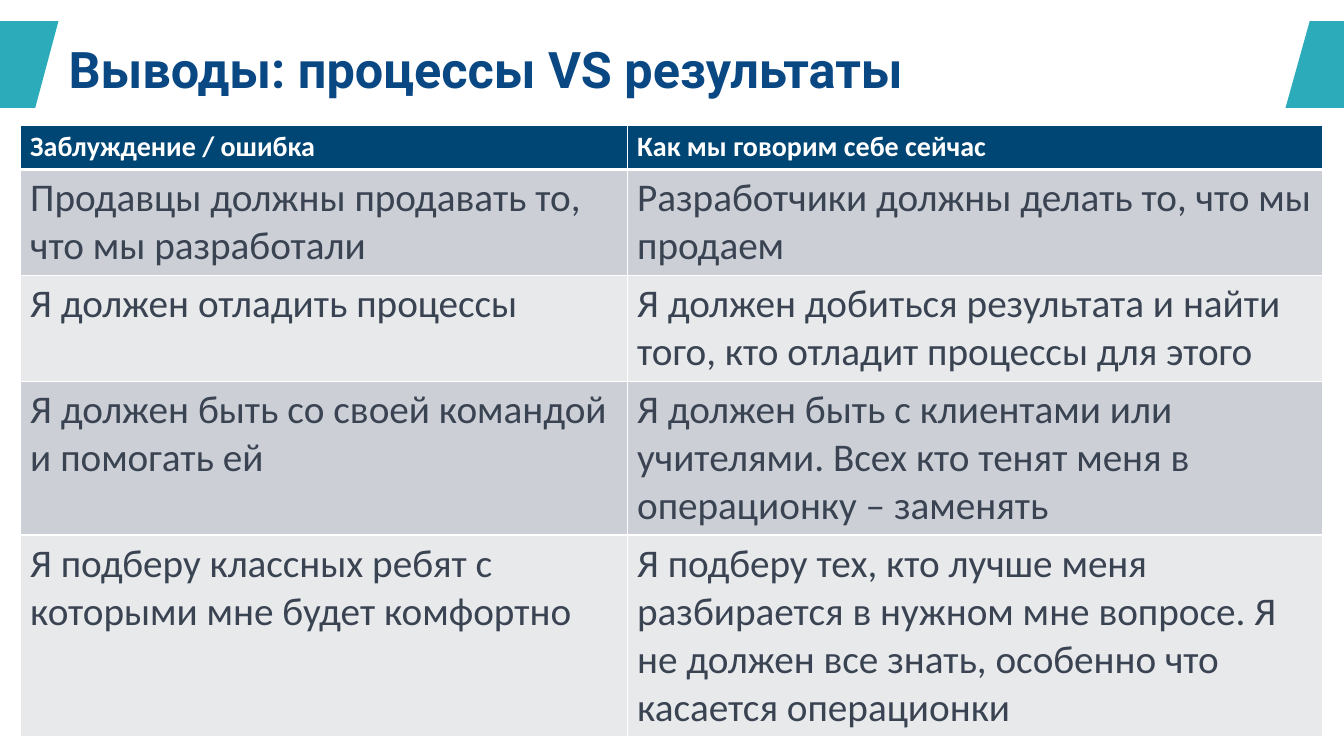
from lxml.etree import SubElement
from pptx import Presentation
from pptx.dml.color import RGBColor
from pptx.enum.text import MSO_ANCHOR, PP_ALIGN
from pptx.oxml.ns import qn
from pptx.util import Inches, Pt

SLIDE_W, SLIDE_H = 13.33, 7.5
TEAL, TITLE_BLUE, HEADER_BLUE = "2CACBA", "0A4884", "004674"
WHITE, TEXT_GREY, BAND_DARK, BAND_LIGHT = "FFFFFF", "3A4352", "CCCFD6", "E7E9EB"

BAND_TOP, BAND_BOTTOM = 0.21, 1.07
TABLE_LEFT, TABLE_TOP = 0.2, 1.24
COLUMN_WIDTHS = (6.02, 6.9)
HEADER_HEIGHT, LINE_HEIGHT, CELL_PADDING = 0.44, 0.475, 0.1

HEADER = ("Заблуждение / ошибка", "Как мы говорим себе сейчас")
# Each row: misconception, current view, number of text lines
ROWS = (
    ("Продавцы должны продавать то, что мы разработали",
     "Разработчики должны делать то, что мы продаем", 2),
    ("Я должен отладить процессы",
     "Я должен добиться результата и найти того, кто отладит процессы для этого", 2),
    ("Я должен быть со своей командой и помогать ей",
     "Я должен быть с клиентами или учителями. Всех кто тенят меня в "
     "операционку – заменять", 3),
    ("Я подберу классных ребят с которыми мне будет комфортно",
     "Я подберу тех, кто лучше меня разбирается в нужном мне вопросе. "
     "Я не должен все знать, особенно что касается операционки", 4),
)


def set_fill(target, color):
    target.fill.solid()
    target.fill.fore_color.rgb = RGBColor.from_string(color)


def write(tf, text, size, color, font="Calibri", bold=False):
    p = tf.paragraphs[0]
    p.alignment = PP_ALIGN.LEFT
    r = p.add_run()
    r.text = text
    r.font.name, r.font.size, r.font.bold = font, Pt(size), bold
    r.font.color.rgb = RGBColor.from_string(color)


def add_polygon(s, points, color):
    start, *rest = [(Inches(x), Inches(y)) for x, y in points]
    builder = s.shapes.build_freeform(*start)
    builder.add_line_segments(rest, close=True)
    sp = builder.convert_to_shape()
    sp.shadow.inherit = False
    sp.line.fill.background()
    set_fill(sp, color)


def add_title(s, text):
    sp = s.shapes.title
    sp.left, sp.top = Inches(0.58), Inches(0.12)
    sp.width, sp.height = Inches(12.17), Inches(1.11)
    sp.text_frame.vertical_anchor = MSO_ANCHOR.MIDDLE
    write(sp.text_frame, text, 36, TITLE_BLUE, font="Roboto", bold=True)


def set_borders(cell, **widths):
    """Draw white borders; widths in points are keyed by side: L, R, T, B."""
    tc_pr = cell._tc.get_or_add_tcPr()
    for side, width in widths.items():
        ln = SubElement(tc_pr, qn(f"a:ln{side}"), w=str(Pt(width)))
        SubElement(SubElement(ln, qn("a:solidFill")), qn("a:srgbClr"), val=WHITE)


def add_comparison_table(s):
    heights = [HEADER_HEIGHT]
    heights += [CELL_PADDING + lines * LINE_HEIGHT for *_, lines in ROWS]
    table = s.shapes.add_table(
        len(heights), len(COLUMN_WIDTHS), Inches(TABLE_LEFT), Inches(TABLE_TOP),
        Inches(sum(COLUMN_WIDTHS)), Inches(sum(heights))).table
    for column, width in zip(table.columns, COLUMN_WIDTHS):
        column.width = Inches(width)
    for row, height in zip(table.rows, heights):
        row.height = Inches(height)

    for i, texts in enumerate([HEADER] + [row[:2] for row in ROWS]):
        is_header = i == 0
        band = HEADER_BLUE if is_header else BAND_DARK if i % 2 else BAND_LIGHT
        for cell, text in zip(table.rows[i].cells, texts):
            set_borders(cell, L=1, R=1, T=3 if i == 1 else 1, B=3 if is_header else 1)
            set_fill(cell, band)
            write(cell.text_frame, text, 20 if is_header else 28,
                  WHITE if is_header else TEXT_GREY, bold=is_header)


def main():
    prs = Presentation()
    prs.slide_width, prs.slide_height = Inches(SLIDE_W), Inches(SLIDE_H)
    s = prs.slides.add_slide(prs.slide_layouts[5])
    add_polygon(s, [(0, BAND_TOP), (0.58, BAND_TOP),
                    (0.35, BAND_BOTTOM), (0, BAND_BOTTOM)], TEAL)
    add_polygon(s, [(12.99, BAND_TOP), (SLIDE_W, BAND_TOP),
                    (SLIDE_W, BAND_BOTTOM), (12.75, BAND_BOTTOM)], TEAL)
    add_title(s, "Выводы: процессы VS результаты")
    add_comparison_table(s)
    prs.save("out.pptx")


if __name__ == "__main__":
    main()
